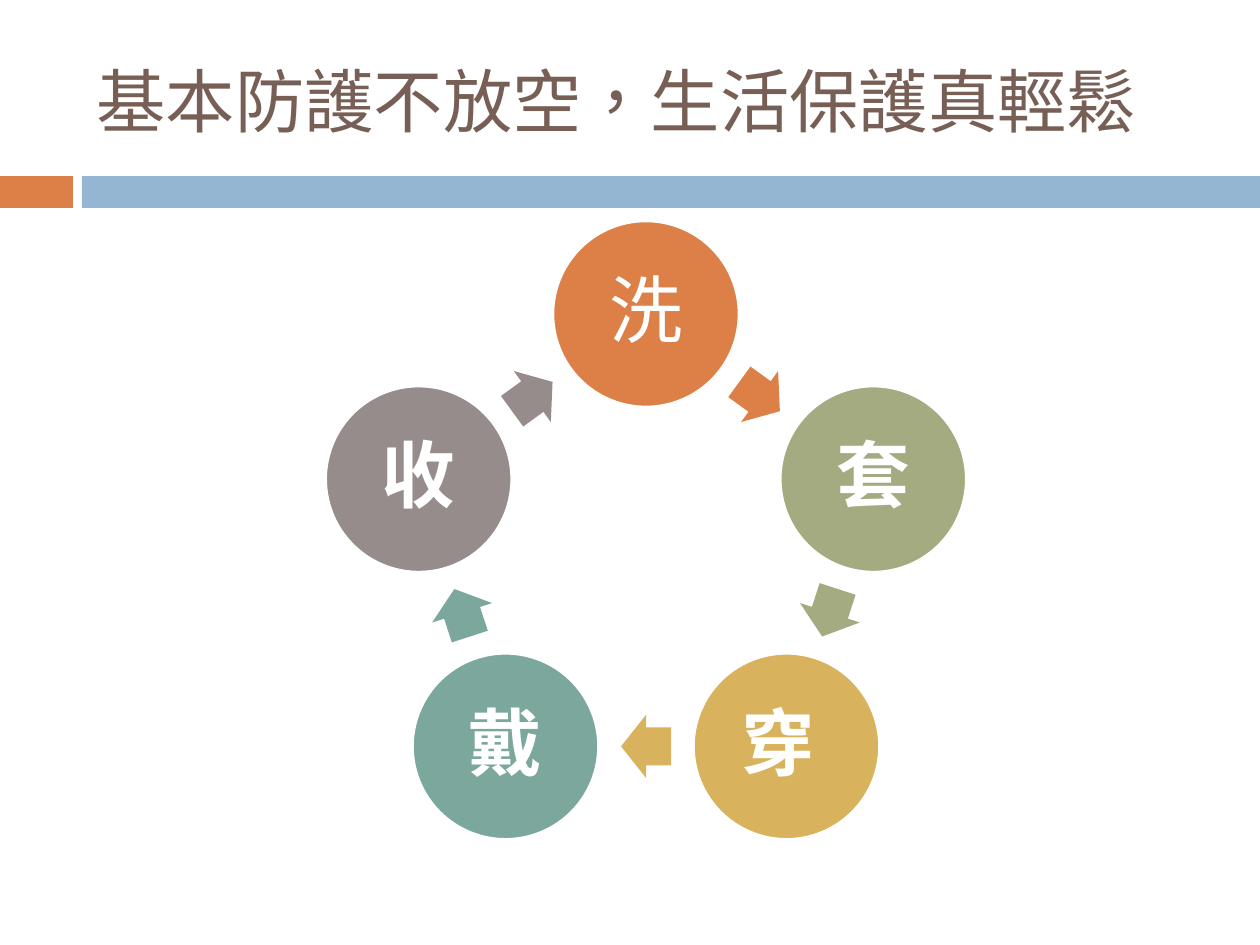
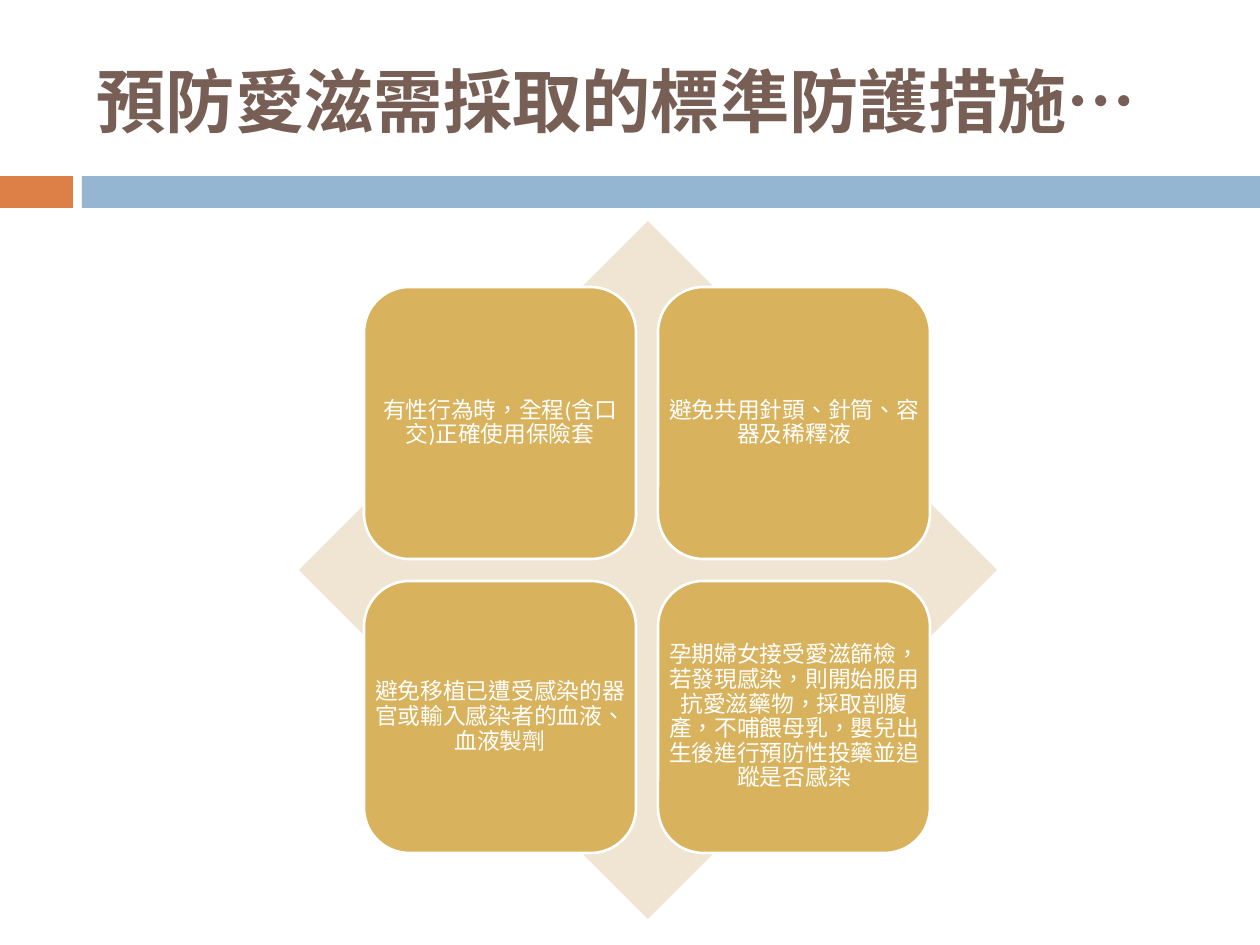
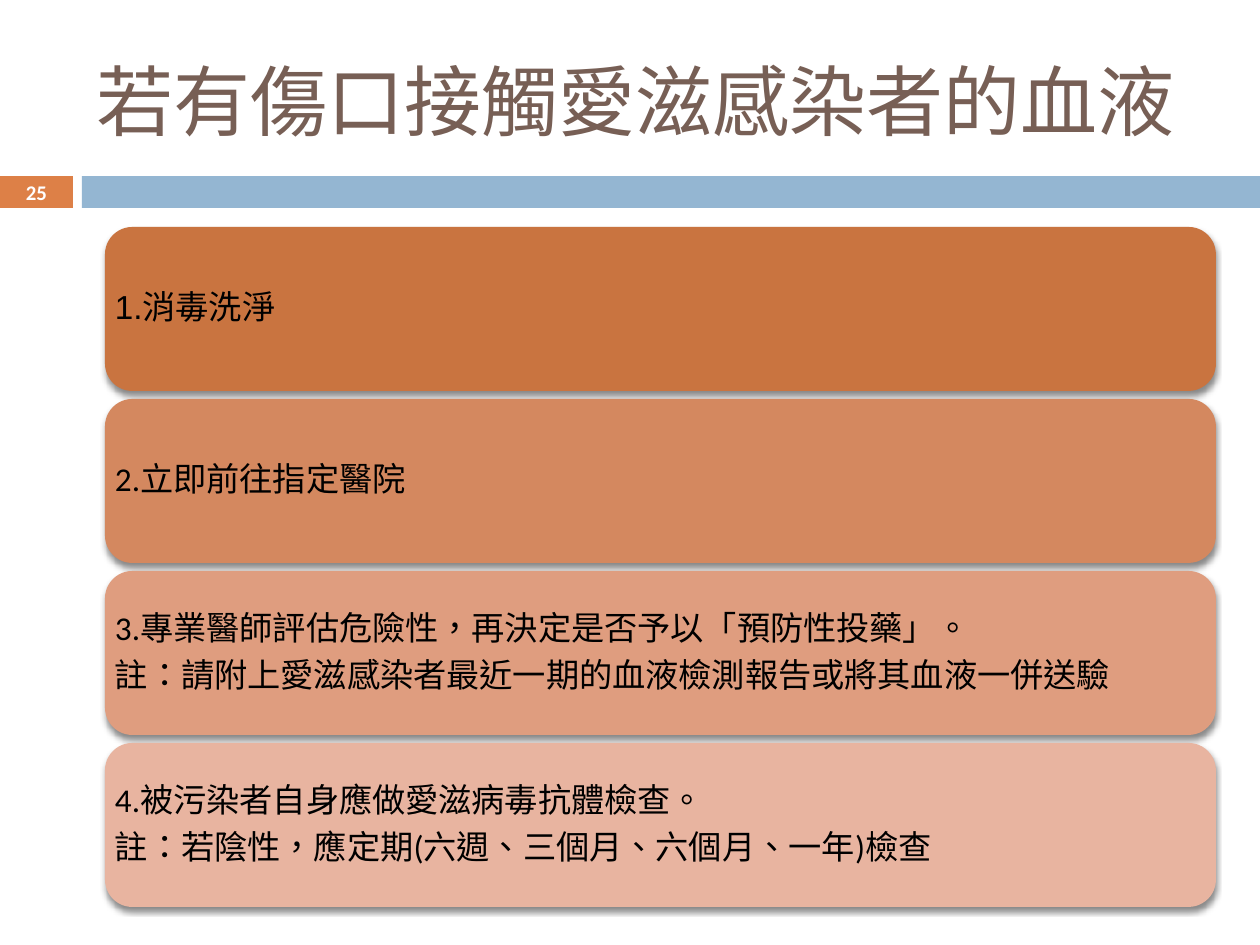
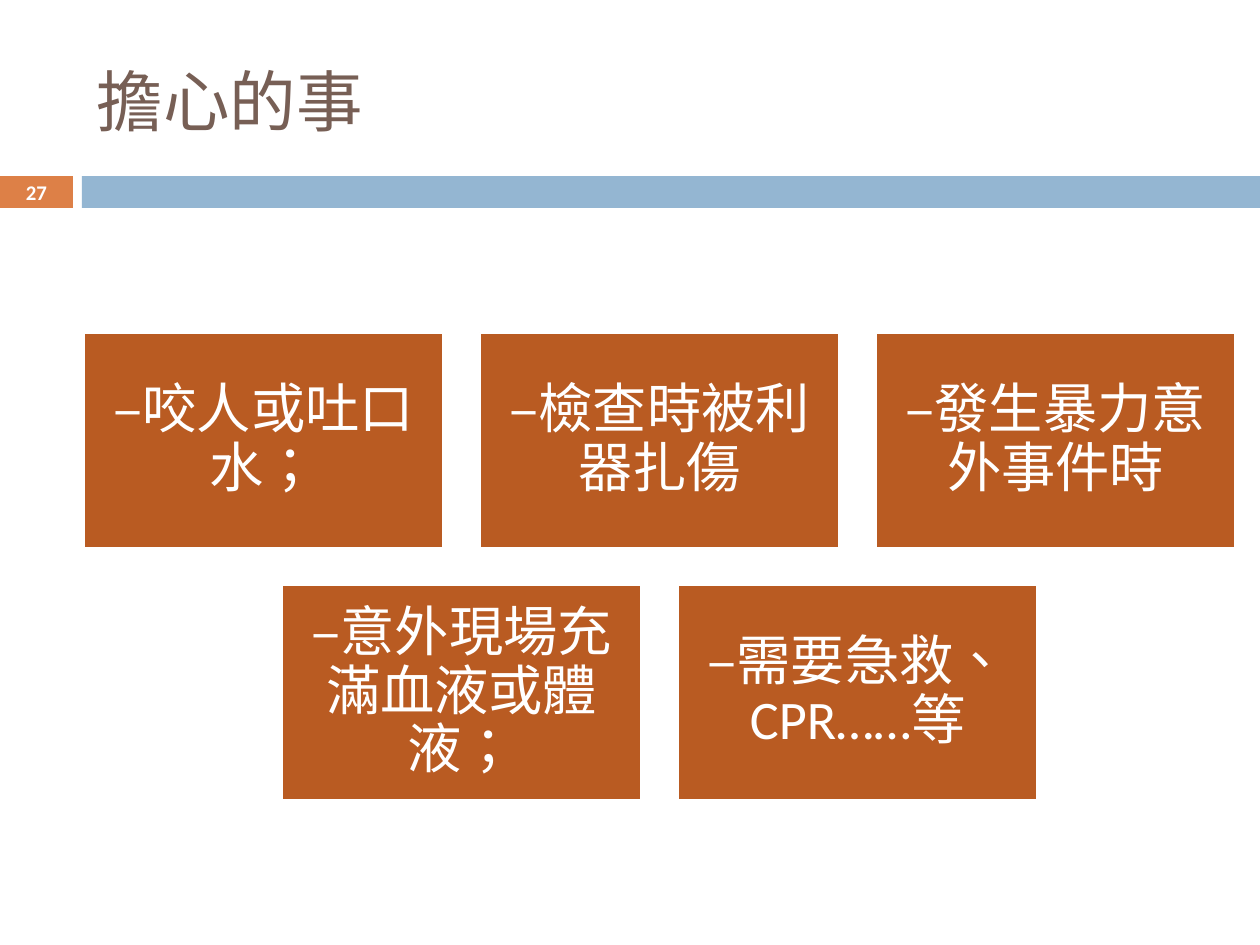
from math import cos, radians, sin

from lxml import etree
from pptx import Presentation
from pptx.dml.color import RGBColor
from pptx.enum.lang import MSO_LANGUAGE_ID
from pptx.enum.shapes import MSO_SHAPE
from pptx.enum.text import MSO_ANCHOR, MSO_AUTO_SIZE, PP_ALIGN
from pptx.oxml.ns import qn
from pptx.util import Emu, Pt

RECT, ROUNDED = MSO_SHAPE.RECTANGLE, MSO_SHAPE.ROUNDED_RECTANGLE
OVAL, DIAMOND, ARROW = MSO_SHAPE.OVAL, MSO_SHAPE.DIAMOND, MSO_SHAPE.RIGHT_ARROW
LEFT, CENTER = PP_ALIGN.LEFT, PP_ALIGN.CENTER
MIDDLE = MSO_ANCHOR.MIDDLE
NO_FIT = MSO_AUTO_SIZE.NONE
CHINESE = MSO_LANGUAGE_ID.TRADITIONAL_CHINESE

PX_PER_INCH = 126
FONT = "Calibri"
WHITE = RGBColor(0xFF, 0xFF, 0xFF)
BLACK = RGBColor(0x00, 0x00, 0x00)
BROWN = RGBColor(0x77, 0x5F, 0x55)
ORANGE = RGBColor(0xDD, 0x80, 0x47)
BLUE = RGBColor(0x94, 0xB6, 0xD2)
GREEN = RGBColor(0xA5, 0xAB, 0x81)
GOLD = RGBColor(0xD8, 0xB2, 0x5C)
TEAL = RGBColor(0x7B, 0xA7, 0x9D)
GRAY = RGBColor(0x96, 0x8C, 0x8C)
CREAM = RGBColor(0xF0, 0xE4, 0xD2)
RUST = RGBColor(0xB9, 0x5B, 0x22)
STEP_COLORS = (RGBColor(0xC9, 0x74, 0x40), RGBColor(0xD4, 0x88, 0x5F),
               RGBColor(0xDF, 0x9D, 0x7F), RGBColor(0xE8, 0xB4, 0xA0))

PROTECTION_CYCLE = (("洗", ORANGE), ("套", GREEN), ("穿 ", GOLD),
                    ("戴", TEAL), ("收", GRAY))
MEASURES = (
    "有性行為時，全程(含口交)正確使用保險套",
    "避免共用針頭、針筒、容器及稀釋液",
    "避免移植已遭受感染的器官或輸入感染者的血液、血液製劑",
    "孕期婦女接受愛滋篩檢，若發現感染，則開始服用抗愛滋藥物，"
    "採取剖腹產，不哺餵母乳，嬰兒出生後進行預防性投藥並追蹤是否感染",
)
EXPOSURE_STEPS = (
    "1.消毒洗淨",
    "2.立即前往指定醫院",
    "3.專業醫師評估危險性，再決定是否予以「預防性投藥」。\n"
    "註：請附上愛滋感染者最近一期的血液檢測報告或將其血液一併送驗",
    "4.被污染者自身應做愛滋病毒抗體檢查。\n"
    "註：若陰性，應定期(六週、三個月、六個月、一年)檢查",
)
WORRIES = ("–咬人或吐口水；", "–檢查時被利器扎傷", "–發生暴力意外事件時",
           "–意外現場充滿血液或體液；", "–需要急救、CPR……等")


def px(n):
    return Emu(round(n * 914400 / PX_PER_INCH))


def box(x, y, w, h):
    return px(x), px(y), px(w), px(h)


def write(tf, text, size, color=WHITE, bold=False, font=FONT, align=CENTER,
          inset=None, compact=False):
    """Fill a text frame, one paragraph per line, keeping punctuation inside."""
    tf.word_wrap = True
    tf.auto_size = NO_FIT
    tf.vertical_anchor = MIDDLE
    if inset is not None:
        tf.margin_left = tf.margin_right = px(inset)
        tf.margin_top = tf.margin_bottom = px(inset)
    for i, line in enumerate(text.split("\n")):
        p = tf.add_paragraph() if i else tf.paragraphs[0]
        p.alignment = align
        p._p.get_or_add_pPr().set("hangingPunct", "0")
        if compact:
            p.line_spacing = 0.9
            p.space_after = Pt(round(size * 0.35, 1))
        r = p.add_run()
        r.text = line
        r.font.size, r.font.name, r.font.bold = Pt(size), font, bold
        r.font.color.rgb = color
        r.font.language_id = CHINESE


def add_block(slide, kind, x, y, w, h, fill, outlined=False):
    s = slide.shapes.add_shape(kind, *box(x, y, w, h))
    s.shadow.inherit = False
    s.fill.solid()
    s.fill.fore_color.rgb = fill
    if outlined:
        s.line.color.rgb = WHITE
        s.line.width = Pt(1.5)
    else:
        s.line.fill.background()
    return s


def add_label(slide, text, x, y, w, h, size, **fmt):
    s = slide.shapes.add_textbox(*box(x, y, w, h))
    write(s.text_frame, text, size, **fmt)


def add_drop_shadow(shape):
    effects = shape.element.spPr.find(qn("a:effectLst"))
    shadow = etree.SubElement(effects, qn("a:outerShdw"), blurRad="38100",
                              dist="30480", dir="5400000", rotWithShape="0")
    color = etree.SubElement(shadow, qn("a:srgbClr"), val="000000")
    etree.SubElement(color, qn("a:alpha"), val="45000")


def prepare_layout(prs):
    """Give the title-only layout its title position and drop its footers."""
    layout = prs.slide_layouts[5]
    for ph in list(layout.placeholders)[1:]:
        ph.element.getparent().remove(ph.element)
    title = layout.placeholders[0]
    title.left, title.top, title.width, title.height = box(84, 32, 1124, 136)
    return layout


def add_bands(slide, layout):
    """Draw the bands and move them to the layout, which all slides share."""
    for x, w, color in ((0, 73, ORANGE), (82, 1178, BLUE)):
        band = add_block(slide, RECT, x, 176, w, 32, color)
        layout.shapes.element.append(band.element)


def add_titled_slide(prs, layout, title, size, bold=False, number=None):
    slide = prs.slides.add_slide(layout)
    write(slide.shapes.title.text_frame, title, size, color=BROWN, bold=bold,
          align=LEFT)
    if number:
        add_label(slide, number, 0, 175, 73, 34, 11.9, bold=True)
    return slide


def add_cycle(slide, items, cx=646, cy=553, radius=239, diameter=186):
    """Place circles evenly on a ring, with an arrow between neighbours."""
    turn = 360 / len(items)
    arrow_w, arrow_h = 50, 63
    chord_radius = radius * cos(radians(turn / 2))

    def corner(angle, distance, w, h):
        a = radians(angle)
        return cx + distance * sin(a) - w / 2, cy - distance * cos(a) - h / 2

    for i, (text, color) in enumerate(items):
        x, y = corner(i * turn, radius, diameter, diameter)
        circle = add_block(slide, OVAL, x, y, diameter, diameter, color,
                           outlined=True)
        write(circle.text_frame, text, 42, bold=i > 0, inset=8, compact=True)
        middle = (i + 0.5) * turn
        x, y = corner(middle, chord_radius, arrow_w, arrow_h)
        arrow = add_block(slide, ARROW, x, y, arrow_w, arrow_h, color)
        arrow.adjustments[0], arrow.adjustments[1] = 0.6, 0.5
        arrow.rotation = middle


def add_matrix(slide, texts, left=364, top=287, side=272, step=294):
    add_block(slide, DIAMOND, 299, 221, 698, 698, CREAM)
    for i, text in enumerate(texts):
        row, col = divmod(i, 2)
        area = (left + col * step, top + row * step, side, side)
        add_block(slide, ROUNDED, *area, GOLD, outlined=True)
        add_label(slide, text, *area, 13, inset=6, compact=True)


def add_steps(slide, texts, top=227, step=172):
    for i, (text, color) in enumerate(zip(texts, STEP_COLORS)):
        area = (105, top + i * step, 1111, 164)
        add_drop_shadow(add_block(slide, ROUNDED, *area, color))
        add_label(slide, text, *area, 19, color=BLACK, align=LEFT, inset=10,
                  font=FONT if i else "Arial", compact=True)


def add_tiles(slide, texts, left=84, top=333, step=396, row_step=252):
    """Lay tiles in rows of three, the second row shifted by half a step."""
    for i, text in enumerate(texts):
        row, col = divmod(i, 3)
        x = left + (col + row / 2) * step
        tile = add_block(slide, RECT, x, top + row * row_step, 359, 215, RUST,
                         outlined=True)
        write(tile.text_frame, text, 31, inset=16, compact=True)


def main():
    prs = Presentation()
    prs.slide_width, prs.slide_height = px(1260), px(945)
    layout = prepare_layout(prs)

    slide = add_titled_slide(prs, layout, "基本防護不放空，生活保護真輕鬆", 39.6)
    add_bands(slide, layout)
    add_cycle(slide, PROTECTION_CYCLE)

    slide = add_titled_slide(prs, layout, "預防愛滋需採取的標準防護措施…", 39.6,
                             bold=True)
    add_matrix(slide, MEASURES)

    slide = add_titled_slide(prs, layout, "若有傷口接觸愛滋感染者的血液", 44,
                             number="25")
    add_steps(slide, EXPOSURE_STEPS)

    slide = add_titled_slide(prs, layout, "擔心的事", 38, number="27")
    add_tiles(slide, WORRIES)

    prs.save("out.pptx")


if __name__ == "__main__":
    main()
